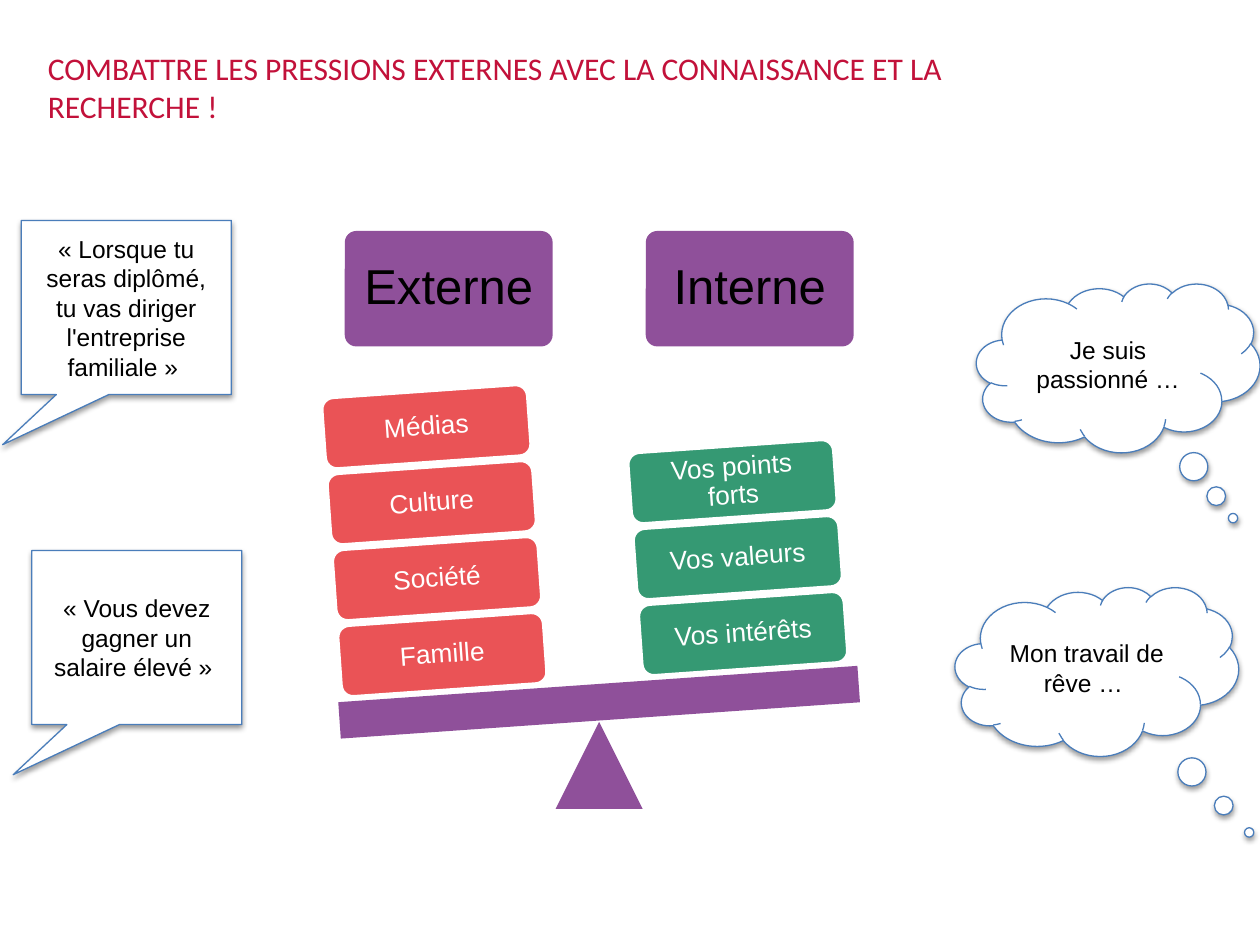
from math import cos, radians, sin

from lxml import etree
from pptx import Presentation
from pptx.dml.color import RGBColor
from pptx.enum.shapes import MSO_SHAPE
from pptx.enum.text import MSO_ANCHOR, PP_ALIGN
from pptx.oxml import parse_xml
from pptx.oxml.ns import nsdecls, qn
from pptx.util import Pt

ROUNDED = MSO_SHAPE.ROUNDED_RECTANGLE
SPEECH = MSO_SHAPE.RECTANGULAR_CALLOUT
THOUGHT = MSO_SHAPE.CLOUD_CALLOUT
MIDDLE = MSO_ANCHOR.MIDDLE
CENTER = PP_ALIGN.CENTER

BLACK = RGBColor(0x00, 0x00, 0x00)
WHITE = RGBColor(0xFF, 0xFF, 0xFF)
CRIMSON = RGBColor(0xC2, 0x11, 0x3A)
PURPLE = RGBColor(0x83, 0x3E, 0x90)
RED = RGBColor(0xEA, 0x53, 0x56)
GREEN = RGBColor(0x35, 0x99, 0x73)
BLUE = RGBColor(0x4A, 0x7D, 0xBA)

TILT = 4  # degrees, counter-clockwise
STACKS = [
    ("Externe", RED, ["Famille", "Société", "Culture", "Médias"]),
    ("Interne", GREEN, ["Vos intérêts", "Vos valeurs", "Vos points forts"]),
]
BUBBLES = [
    (SPEECH, (12.2, 126, 120, 99.5), (-0.589, 0.788),
     "« Lorsque tu seras diplômé, tu vas diriger l'entreprise familiale » "),
    (SPEECH, (18.2, 314.6, 120, 99.5), (-0.589, 0.788),
     "« Vous devez gagner un salaire élevé » "),
    (THOUGHT, (545.8, 335.5, 162, 96.5), (0.537, 0.953), "Mon travail de rêve … "),
    (THOUGHT, (558, 162, 162, 96.5), (0.405, 0.89), "Je suis passionné …"),
]


def add_text(s, text, size, color, inset_x, inset_y, spacing=1.0):
    tf = s.text_frame
    tf.word_wrap = True
    tf.vertical_anchor = MIDDLE
    tf.margin_left = tf.margin_right = Pt(inset_x)
    tf.margin_top = tf.margin_bottom = Pt(inset_y)
    p = tf.paragraphs[0]
    p.text = text
    p.alignment = CENTER
    p.line_spacing = spacing
    p.font.name = "Arial"
    p.font.size = Pt(size)
    p.font.color.rgb = color


def add_box(slide, kind, box, fill, line=None, width=0.75):
    s = slide.shapes.add_shape(kind, *map(Pt, box))
    s.shadow.inherit = False
    s.fill.solid()
    s.fill.fore_color.rgb = fill
    if line is None:
        s.line.fill.background()
    else:
        s.line.color.rgb = line
        s.line.width = Pt(width)
    return s


def add_centered(slide, kind, cx, cy, w, h, *style):
    return add_box(slide, kind, (cx - w / 2, cy - h / 2, w, h), *style)


def soften(s):
    """Make a solid fill 90% opaque."""
    color = s.fill._xPr.find(qn("a:solidFill"))[0]
    etree.SubElement(color, qn("a:alpha"), val="90000")


def add_title(slide, box):
    tf = slide.shapes.add_textbox(*map(Pt, box)).text_frame
    tf.word_wrap = True
    p = tf.paragraphs[0]
    p.text = "COMBATTRE LES PRESSIONS EXTERNES AVEC LA CONNAISSANCE ET LA RECHERCHE !"
    p.font.name = "Calibri"
    p.font.size = Pt(18)
    p.font.color.rgb = CRIMSON


def add_bubble(slide, kind, box, tail, text):
    s = add_box(slide, kind, box, WHITE, BLUE)
    s.adjustments[0], s.adjustments[1] = tail
    effects = s._element.spPr.find(qn("a:effectLst"))
    effects.append(parse_xml(
        f'<a:outerShdw {nsdecls("a")} blurRad="{Pt(3.1)}" dist="{Pt(1.6)}" '
        'dir="5400000" rotWithShape="0"><a:srgbClr val="000000">'
        '<a:alpha val="38000"/></a:srgbClr></a:outerShdw>'))
    add_text(s, text, 14, BLACK, 7.2, 3.6)


def add_balance(slide, box):
    """Headings above a tilted beam that carries one stack of blocks per heading."""
    left, top, width, height = box
    cx = left + width / 2
    base = 49.7
    beam_y = top + height - base - 11.2
    dx, dy = cos(radians(TILT)), sin(radians(TILT))

    for side, (heading, _, _) in zip((-1, 1), STACKS):
        s = add_centered(slide, ROUNDED, cx + side * 86, top + 33, 118.8, 66, PURPLE)
        s.adjustments[0] = 0.1
        soften(s)
        add_text(s, heading, 28, BLACK, 9, 9, 0.9)

    soften(add_box(slide, MSO_SHAPE.ISOSCELES_TRIANGLE,
                   (cx - base / 2, top + height - base, base, base), PURPLE))
    beam = add_centered(slide, MSO_SHAPE.RECTANGLE, cx, beam_y, width, 20.9, PURPLE)
    beam.rotation = -TILT
    soften(beam)

    for along, (_, color, labels) in zip((-87.5, 84.8), STACKS):
        for i, label in enumerate(labels):
            above = 33.4 + 43.5 * i
            s = add_centered(slide, ROUNDED, cx + along * dx - above * dy,
                             beam_y - along * dy - above * dx, 118, 41, color, WHITE, 2)
            s.rotation = -TILT
            add_text(s, label, 15, WHITE, 6, 6, 0.9)


def main():
    prs = Presentation()
    prs.slide_width, prs.slide_height = Pt(720), Pt(540)
    slide = prs.slides.add_slide(prs.slide_layouts[6])
    add_balance(slide, (193.7, 132, 297.4, 330.2))
    for bubble in BUBBLES:
        add_bubble(slide, *bubble)
    add_title(slide, (20.2, 24.5, 578, 51))
    prs.save("out.pptx")


if __name__ == "__main__":
    main()
